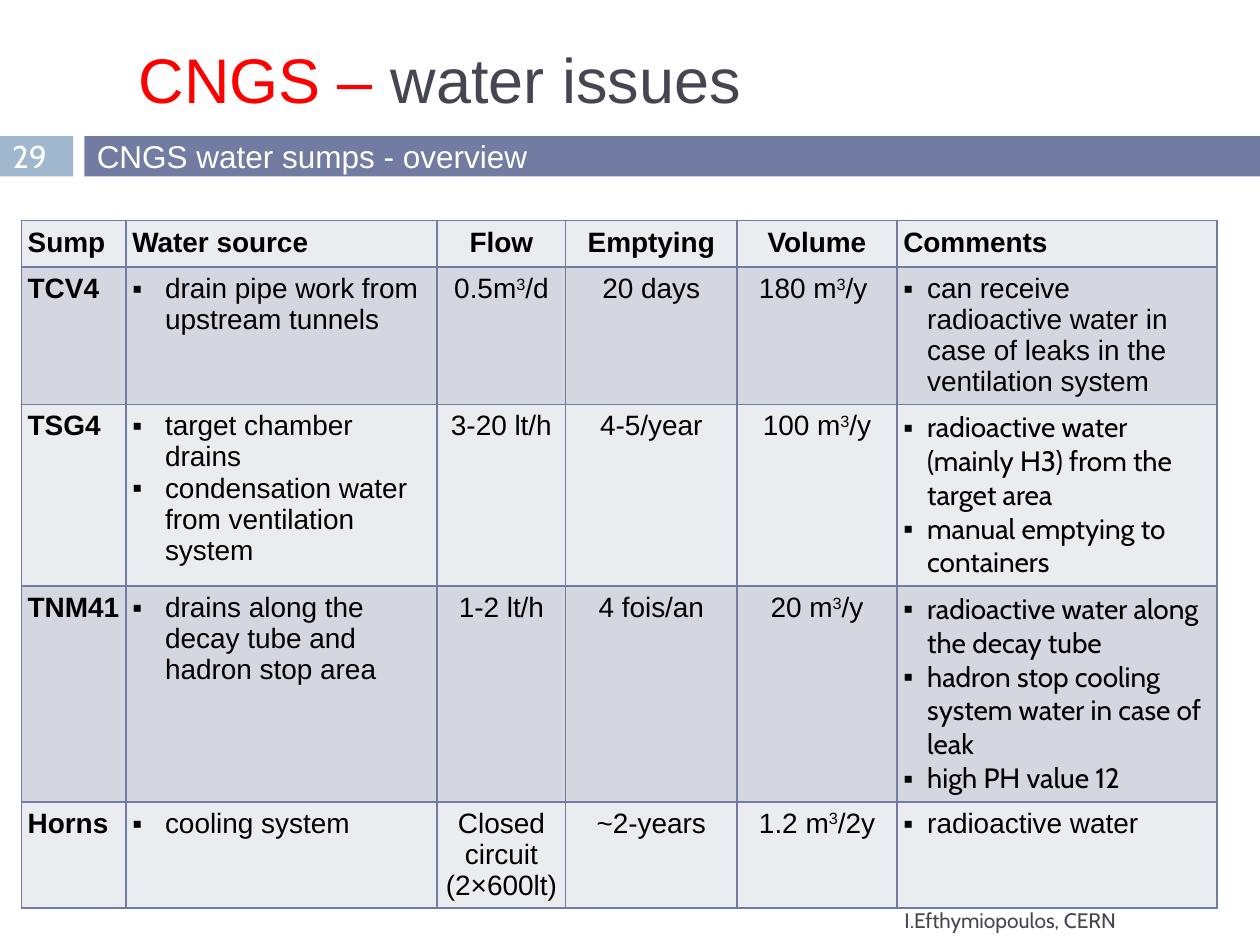
import pptx
import pptx.dml.color
import pptx.enum.shapes
import pptx.enum.text
import pptx.oxml
import pptx.util
from pptx.util import Inches

ALIGN = pptx.enum.text.PP_ALIGN
MIDDLE = pptx.enum.text.MSO_ANCHOR.MIDDLE
NAMESPACE = 'xmlns:a="http://schemas.openxmlformats.org/drawingml/2006/main"'
SLATE = "727CA3"
INK = "464653"


def color(value):
    return pptx.dml.color.RGBColor.from_string(value)


def style(span, size, name, value, bold=False):
    span.font.size = pptx.util.Pt(size)
    span.font.name = name
    span.font.color.rgb = color(value)
    span.font.bold = bold


deck = pptx.Presentation()
deck.slide_width, deck.slide_height = Inches(10), Inches(7.5)
page = deck.slides.add_slide(deck.slide_layouts[5])

title = page.shapes.title
title.left, title.top, title.width, title.height = Inches(1), Inches(0.25), Inches(9), Inches(0.75)
title.text_frame.vertical_anchor = MIDDLE
title_para = title.text_frame.paragraphs[0]
title_para.alignment = ALIGN.LEFT
for text, value in [("CNGS – ", "FF0000"), ("water issues", INK)]:
    span = title_para.add_run()
    span.text = text
    style(span, 36, "Arial", value)

# Page number and subtitle bars
for left, width, fill, text, font in [
    (0, 0.58, "9FB8CD", "29", "Cabin"),
    (0.67, 9.33, SLATE, "CNGS water sumps - overview", "Arial"),
]:
    bar = page.shapes.add_shape(
        pptx.enum.shapes.MSO_SHAPE.RECTANGLE, Inches(left), Inches(1.08), Inches(width), Inches(0.32))
    bar.shadow.inherit = False
    bar.fill.solid()
    bar.fill.fore_color.rgb = color(fill)
    bar.line.fill.background()
    frame = bar.text_frame
    frame.margin_left = Inches(0.1)
    frame.margin_top = frame.margin_right = frame.margin_bottom = Inches(0.01)
    frame.vertical_anchor = MIDDLE
    frame.text = text
    frame.paragraphs[0].alignment = ALIGN.LEFT
    style(frame.paragraphs[0].runs[0], 18, font, "FFFFFF")

# Each cell is a list of paragraphs; ³ becomes a superscript run
rows = [
    [["Sump"], ["Water source"], ["Flow"], ["Emptying"], ["Volume"], ["Comments"]],
    [["TCV4"], ["drain pipe work from upstream tunnels"], ["0.5m³/d"], ["20 days"], ["180 m³/y "],
     ["can receive radioactive water in case of leaks in the ventilation system"]],
    [["TSG4"], ["target chamber drains", "condensation water from ventilation system"],
     ["3-20 lt/h"], ["4-5/year"], ["100 m³/y"],
     ["radioactive water (mainly H3) from the target area", "manual emptying to containers"]],
    [["TNM41"], ["drains along the decay tube and hadron stop area"],
     ["1-2 lt/h"], ["4 fois/an"], ["20 m³/y"],
     ["radioactive water along the decay tube",
      "hadron stop cooling system water in case of leak", "high PH value 12"]],
    [["Horns"], ["cooling system"], ["Closed circuit (2×600lt)"], ["~2-years"], ["1.2 m³/2y"],
     ["radioactive water"]],
]
column_widths = [0.83, 2.47, 1.02, 1.36, 1.27, 2.54]
row_heights = [0.37, 1.09, 1.44, 1.71, 0.84]
bullet_indents = {1: 0.26, 5: 0.19}
cabin_cells = [(2, 5), (3, 5)]

table = page.shapes.add_table(
    len(rows), len(column_widths), Inches(0.17), Inches(1.75),
    Inches(sum(column_widths)), Inches(sum(row_heights))).table
for column, width in zip(table.columns, column_widths):
    column.width = Inches(width)
for row, height in zip(table.rows, row_heights):
    row.height = Inches(height)

for r, row in enumerate(rows):
    for c, lines in enumerate(row):
        cell = table.cell(r, c)
        cell.margin_left = cell.margin_right = cell.margin_top = cell.margin_bottom = Inches(0.05)
        cell.fill.solid()
        cell.fill.fore_color.rgb = color("D5D7E0" if r % 2 else "EBECF0")
        properties = cell._tc.get_or_add_tcPr()
        for position, side in enumerate(["lnL", "lnR", "lnT", "lnB"]):
            properties.insert(position, pptx.oxml.parse_xml(
                f'<a:{side} {NAMESPACE} w="12700"><a:solidFill><a:srgbClr val="{SLATE}"/>'
                f'</a:solidFill></a:{side}>'))

        font = "Cabin" if (r, c) in cabin_cells else "Arial"
        for i, line in enumerate(lines):
            para = cell.text_frame.add_paragraph() if i else cell.text_frame.paragraphs[0]
            para.alignment = ALIGN.CENTER if c in (2, 3, 4) else ALIGN.LEFT
            if r and c in bullet_indents:
                indent = Inches(bullet_indents[c])
                para_properties = para._p.get_or_add_pPr()
                para_properties.set("marL", str(indent))
                para_properties.set("indent", str(-indent))
                para_properties.append(pptx.oxml.parse_xml(f'<a:buFont {NAMESPACE} typeface="Arial"/>'))
                para_properties.append(pptx.oxml.parse_xml(f'<a:buChar {NAMESPACE} char="▪"/>'))
            before, cube, after = line.partition("³")
            for text in filter(None, [before, cube, after]):
                span = para.add_run()
                span.text = "3" if text == "³" else text
                style(span, 16, font, "000000", bold=r == 0 or c == 0)
                if text == "³":
                    span._r.get_or_add_rPr().set("baseline", "30000")

author = page.shapes.add_textbox(Inches(7.08), Inches(7.1), Inches(2.92), Inches(0.4))
author.text_frame.word_wrap = True
author.text_frame.vertical_anchor = MIDDLE
author.text_frame.text = "I.Efthymiopoulos, CERN"
style(author.text_frame.paragraphs[0].runs[0], 12, "Cabin", INK)

deck.save("out.pptx")
